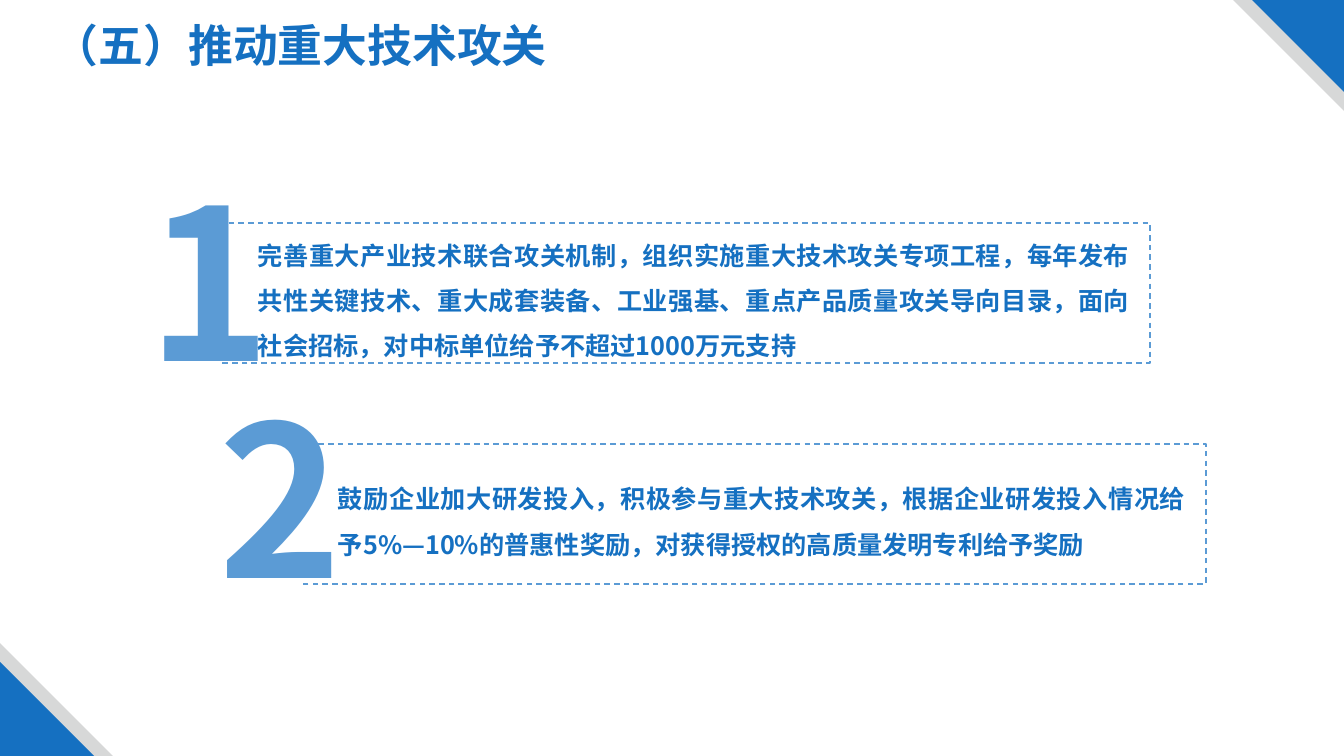
from lxml import etree
from pptx import Presentation
from pptx.dml.color import RGBColor
from pptx.enum.dml import MSO_LINE_DASH_STYLE as Dash
from pptx.enum.shapes import MSO_SHAPE as Kind
from pptx.enum.text import MSO_ANCHOR as Anchor, PP_ALIGN as Align
from pptx.oxml.ns import qn
from pptx.util import Emu, Pt

SCALE = 914400 / 100.8
WIDE, HIGH = 1344, 756
BLUE, SKY, GREY = "1570C1", "5B9BD5", "D7D8D8"
SANS, DIGIT = "Noto Sans CJK SC", "Noto Sans CJK JP"
ITEMS = [
    ("1", (138, 146), (219, 223, 931, 140),
     "完善重大产业技术联合攻关机制，组织实施重大技术攻关专项工程，每年发布"
     "共性关键技术、重大成套装备、工业强基、重点产品质量攻关导向目录，面向"
     "社会招标，对中标单位给予不超过1000万元支持"),
    ("2", (209, 363), (299, 444, 907, 140),
     "鼓励企业加大研发投入，积极参与重大技术攻关，根据企业研发投入情况给"
     "予5%—10%的普惠性奖励，对获得授权的高质量发明专利给予奖励"),
]


def px(n):
    return Emu(round(n * SCALE))


def tint(code):
    return RGBColor.from_string(code)


def apply(item, looks):
    for name, value in looks.items():
        setattr(item, name, value)


def write(shape, text, size, face, color, align, frame=None, para=None):
    body = shape.text_frame
    apply(body, {"word_wrap": True, **(frame or {})})
    line = body.paragraphs[0]
    apply(line, {"alignment": align, **(para or {})})
    run = line.add_run()
    run.text = text
    apply(run.font, {"size": Pt(size), "bold": True, "name": face})
    run.font.color.rgb = tint(color)
    east = etree.SubElement(run._r.get_or_add_rPr(), qn("a:ea"))
    east.set("typeface", face)


def label(slide, box, *words, **looks):
    shape = slide.shapes.add_textbox(*map(px, box))
    write(shape, *words, **looks)


def wedge(slide, x, y, side, color, turn):
    shape = slide.shapes.add_shape(Kind.RIGHT_TRIANGLE, *map(px, (x, y, side, side)))
    shape.shadow.inherit = False
    shape.rotation = turn
    shape.fill.solid()
    shape.fill.fore_color.rgb = tint(color)
    shape.line.fill.background()


def panel(slide, box, text):
    x, y, w, h = map(px, box)
    pen = slide.shapes.build_freeform(x, y)
    pen.add_line_segments([(x + w, y), (x + w, y + h), (x, y + h)], close=False)
    shape = pen.convert_to_shape()
    shape.shadow.inherit = False
    shape.fill.background()
    shape.line.color.rgb = tint(SKY)
    apply(shape.line, {"width": Pt(1), "dash_style": Dash.DASH})
    frame = {"vertical_anchor": Anchor.MIDDLE, "margin_left": px(39)}
    frame.update({f"margin_{side}": px(20) for side in ("top", "right", "bottom")})
    write(shape, text, 18, SANS, BLUE, Align.JUSTIFY, frame, {"line_spacing": 1.5})


def main():
    """Build the slide and save it."""
    deck = Presentation()
    apply(deck, {"slide_width": px(WIDE), "slide_height": px(HIGH)})
    slide = deck.slides.add_slide(deck.slide_layouts[6])
    for color, upper, lower in ((GREY, 111, 113), (BLUE, 92, 94)):
        wedge(slide, WIDE - upper, 0, upper, color, 180)
        wedge(slide, 0, HIGH - lower, lower, color, 0)
    label(slide, (2, 13, 597, 65), "（五）推动重大技术攻关", 32, SANS, BLUE, Align.CENTER)
    for digit, spot, box, text in ITEMS:
        panel(slide, box, text)
        label(slide, (*spot, 82, 264), digit, 150, DIGIT, SKY, Align.CENTER,
              frame={"vertical_anchor": Anchor.MIDDLE})
    deck.save("out.pptx")


if __name__ == "__main__":
    main()
